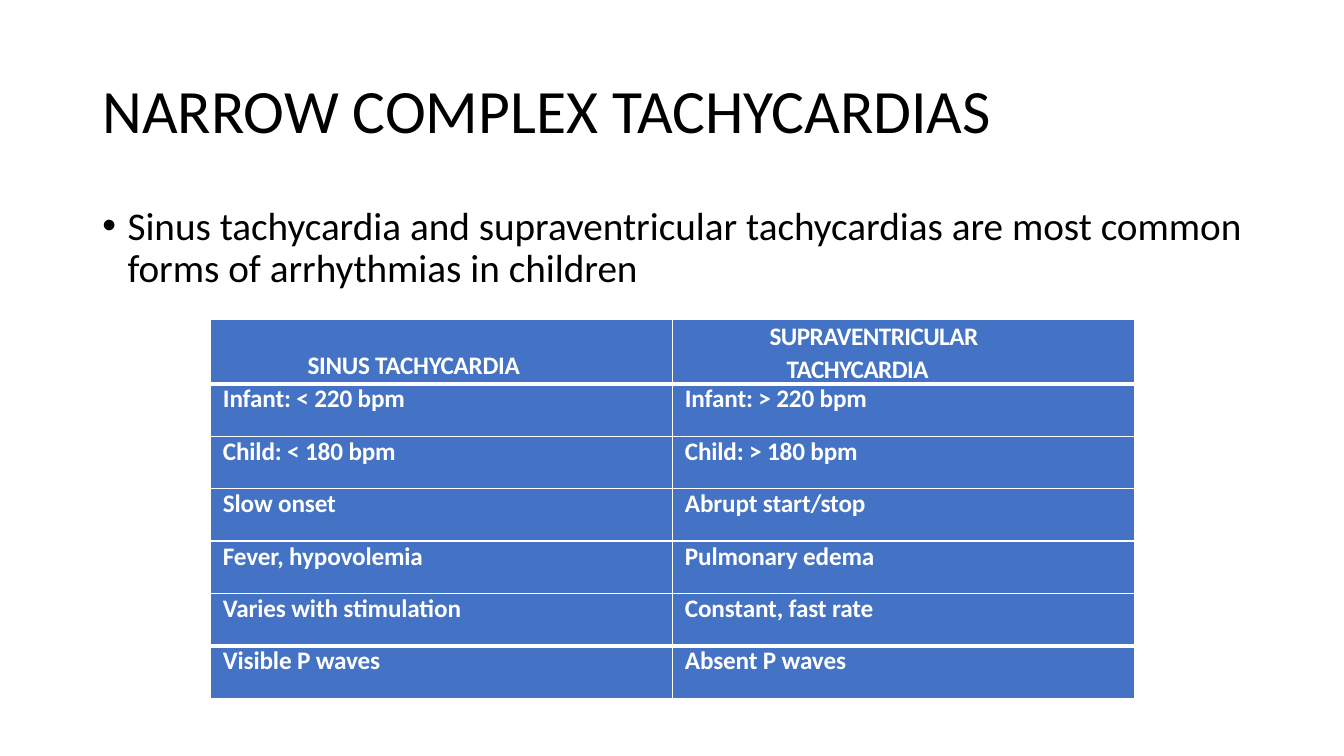
"""Build the slide that compares two narrow complex tachycardias."""
from dataclasses import dataclass

import lxml.etree
import pptx
import pptx.dml.color
import pptx.enum.text
import pptx.oxml.ns
import pptx.slide
import pptx.table
import pptx.text.text
import pptx.util

GRID_COLUMNS, GRID_ROWS = 160, 90
SLIDE_WIDTH, SLIDE_HEIGHT = pptx.util.Inches(13.333), pptx.util.Inches(7.5)


@dataclass(frozen=True)
class Theme:
    font: str = "Calibri"
    ink: str = "000000"
    paper: str = "FFFFFF"
    fill: str = "4472C4"
    title_size: int = 44
    body_size: int = 28
    table_size: int = 18
    thin_rule: int = 1
    thick_rule: int = 3


@dataclass(frozen=True)
class Place:
    left: float
    top: float
    width: float
    height: float


@dataclass(frozen=True)
class TextBlock:
    text: str
    place: Place
    size: int
    anchor: pptx.enum.text.MSO_ANCHOR
    bulleted: bool = False


@dataclass(frozen=True)
class CellStyle:
    indent: float
    hanging: float = 0
    right: float = 0
    bottom: float = 0
    tracking: float = -0.1
    line_spacing: float = 1.0
    anchor: pptx.enum.text.MSO_ANCHOR = pptx.enum.text.MSO_ANCHOR.TOP


THEME = Theme()
BLOCKS = (
    TextBlock("NARROW COMPLEX TACHYCARDIAS", Place(11, 4.8, 138, 17.4),
              THEME.title_size, pptx.enum.text.MSO_ANCHOR.MIDDLE),
    TextBlock("Sinus tachycardia and supraventricular tachycardias are most common "
              "forms of arrhythmias in children", Place(11, 24, 138, 57.1),
              THEME.body_size, pptx.enum.text.MSO_ANCHOR.TOP, bulleted=True),
)
COMPARISON = (
    ("SINUS TACHYCARDIA", "SUPRAVENTRICULAR TACHYCARDIA"),
    ("Infant: < 220 bpm", "Infant: > 220 bpm"),
    ("Child: < 180 bpm", "Child: > 180 bpm"),
    ("Slow onset", "Abrupt start/stop"),
    ("Fever, hypovolemia", "Pulmonary edema"),
    ("Varies with stimulation", "Constant, fast rate"),
    ("Visible P waves", "Absent P waves"),
)
HEADER_HEIGHT, ROW_HEIGHT, COLUMN_WIDTH = 6.6, 6.24, 55
TABLE_PLACE = Place(25.1, 38, 2 * COLUMN_WIDTH,
                    HEADER_HEIGHT + (len(COMPARISON) - 1) * ROW_HEIGHT)
HEADER_STYLES = (
    CellStyle(indent=0.96, bottom=0.03, tracking=-0.2,
              anchor=pptx.enum.text.MSO_ANCHOR.BOTTOM),
    CellStyle(indent=1.13, hanging=-0.17, right=1, tracking=-0.4, line_spacing=1.07),
)
BODY_STYLE = CellStyle(indent=0.12)


def across(columns: float) -> int:
    return round(SLIDE_WIDTH * columns / GRID_COLUMNS)


def down(rows: float) -> int:
    return round(SLIDE_HEIGHT * rows / GRID_ROWS)


def frame(place: Place) -> tuple[int, int, int, int]:
    return across(place.left), down(place.top), across(place.width), down(place.height)


def set_indent(para: pptx.text.text._Paragraph, left: float, hanging: float) -> None:
    properties = para._p.get_or_add_pPr()
    properties.set("marL", str(pptx.util.Inches(left)))
    properties.set("indent", str(pptx.util.Inches(hanging)))


def set_font(para: pptx.text.text._Paragraph, size: int, color: str, bold: bool) -> None:
    para.font.name = THEME.font
    para.font.size = pptx.util.Pt(size)
    para.font.bold = bold
    para.font.color.rgb = pptx.dml.color.RGBColor.from_string(color)


def draw_block(page: pptx.slide.Slide, block: TextBlock) -> None:
    box = page.shapes.add_textbox(*frame(block.place))
    box.text_frame.word_wrap = True
    box.text_frame.vertical_anchor = block.anchor
    para = box.text_frame.paragraphs[0]
    para.text = block.text
    para.line_spacing = 0.9
    if block.bulleted:
        set_indent(para, 0.25, -0.25)
        properties = para._p.get_or_add_pPr()
        for tag, name, value in (("a:buFont", "typeface", "Arial"), ("a:buChar", "char", "•")):
            lxml.etree.SubElement(properties, pptx.oxml.ns.qn(tag)).set(name, value)
    set_font(para, block.size, THEME.ink, False)


def add_border(cell: pptx.table._Cell, side: str, width: int) -> None:
    line = lxml.etree.Element(pptx.oxml.ns.qn(f"a:ln{side}"), w=str(pptx.util.Pt(width)))
    fill = lxml.etree.SubElement(line, pptx.oxml.ns.qn("a:solidFill"))
    lxml.etree.SubElement(fill, pptx.oxml.ns.qn("a:srgbClr")).set("val", THEME.paper)
    cell._tc.get_or_add_tcPr().append(line)


def draw_cell(cell: pptx.table._Cell, text: str, style: CellStyle, top: int, bottom: int) -> None:
    cell.margin_left = cell.margin_top = 0
    cell.margin_right = pptx.util.Inches(style.right)
    cell.margin_bottom = pptx.util.Inches(style.bottom)
    cell.vertical_anchor = style.anchor
    for side, width in (("L", THEME.thin_rule), ("R", THEME.thin_rule), ("T", top), ("B", bottom)):
        add_border(cell, side, width)
    cell.fill.solid()
    cell.fill.fore_color.rgb = pptx.dml.color.RGBColor.from_string(THEME.fill)
    para = cell.text_frame.paragraphs[0]
    para.line_spacing = style.line_spacing
    set_indent(para, style.indent, style.hanging)
    set_font(para, THEME.table_size, THEME.paper, True)
    span = para.add_run()
    span.text = text
    span._r.get_or_add_rPr().set("spc", str(round(style.tracking * 100)))


def draw_comparison(page: pptx.slide.Slide) -> None:
    table = page.shapes.add_table(len(COMPARISON), 2, *frame(TABLE_PLACE)).table
    for column in table.columns:
        column.width = across(COLUMN_WIDTH)
    last = len(COMPARISON) - 1
    rules = [THEME.thin_rule] * (len(COMPARISON) + 1)
    rules[1] = rules[last] = THEME.thick_rule
    for index, texts in enumerate(COMPARISON):
        table.rows[index].height = down(ROW_HEIGHT if index else HEADER_HEIGHT)
        styles = (BODY_STYLE, BODY_STYLE) if index else HEADER_STYLES
        for column, (text, style) in enumerate(zip(texts, styles)):
            draw_cell(table.cell(index, column), text, style, rules[index], rules[index + 1])


def main() -> None:
    deck = pptx.Presentation()
    deck.slide_width, deck.slide_height = SLIDE_WIDTH, SLIDE_HEIGHT
    page = deck.slides.add_slide(deck.slide_layouts[6])
    for block in BLOCKS:
        draw_block(page, block)
    draw_comparison(page)
    deck.save("out.pptx")


if __name__ == "__main__":
    main()
